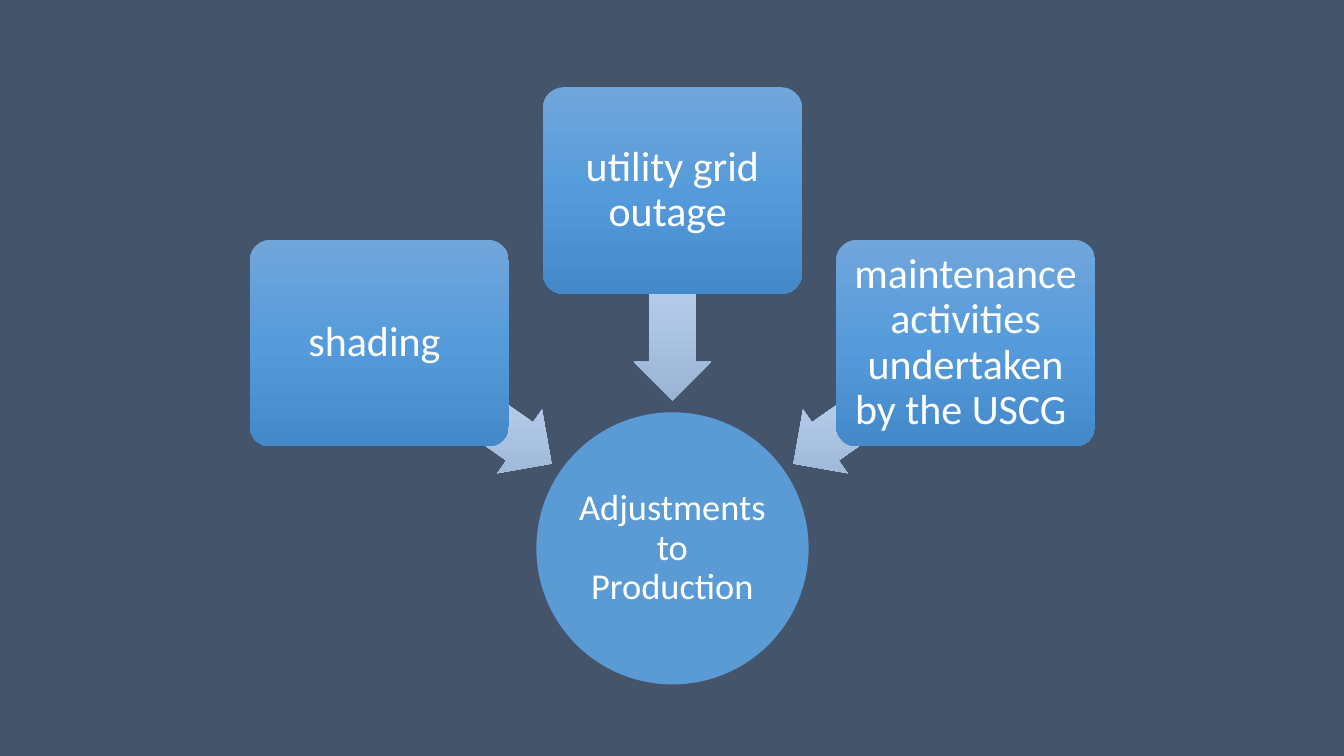
import copy
import math
from dataclasses import dataclass

from pptx import Presentation
from pptx import util as u
from pptx.dml.color import RGBColor
from pptx.enum import shapes, text


@dataclass(frozen=True)
class Theme:
    font: str = "Calibri"
    background: str = "44546A"
    ink: str = "FFFFFF"
    hub: str = "5B9BD5"
    cause: tuple = ("71A6DB", "559BDB", "448ACA")
    arrow: tuple = ("C0D2EB", "B3CBE9", "9BB4D3")
    hub_size: int = 26
    cause_size: int = 30


THEME = Theme()
CAUSES = ["shading ", "utility grid outage ",
          "maintenance activities undertaken by the USCG "]
ANGLE_STEP = 55  # degrees between neighbouring causes around the hub


def add_centred(slide, kind, centre, size):
    """Add a plain shape of the given (width, height) around a centre point."""
    (x, y), (width, height) = centre, size
    shape = slide.shapes.add_shape(
        kind, u.Inches(x - width / 2), u.Inches(y - height / 2),
        u.Inches(width), u.Inches(height))
    shape.shadow.inherit = False
    shape.line.fill.background()
    return shape


def fill_vertical(shape, colours):
    """Fill with evenly spaced colours from top to bottom, whatever the rotation."""
    shape.fill.gradient()
    shape.fill.gradient_angle = 270
    gradient = shape.element.spPr.find("{*}gradFill")
    gradient.set("rotWithShape", "0")
    stops = gradient.find("{*}gsLst")
    stops.append(copy.deepcopy(stops[-1]))
    for index, (stop, colour) in enumerate(zip(shape.fill.gradient_stops, colours)):
        stop.position = index / (len(colours) - 1)
        stop.color.rgb = RGBColor.from_string(colour)


def write_label(shape, label, size, inset):
    frame = shape.text_frame
    frame.text = label
    frame.word_wrap = True
    frame.vertical_anchor = text.MSO_ANCHOR.MIDDLE
    frame.margin_left = frame.margin_right = u.Inches(inset)
    frame.margin_top = frame.margin_bottom = u.Inches(inset)
    para = frame.paragraphs[0]
    para.alignment = text.PP_ALIGN.CENTER
    para.line_spacing = 0.9
    font = para.runs[0].font
    font.name = THEME.font
    font.size = u.Pt(size)
    font.color.rgb = RGBColor.from_string(THEME.ink)


def add_hub(slide, centre, diameter, label):
    hub = add_centred(slide, shapes.MSO_SHAPE.OVAL, centre, (diameter, diameter))
    hub.fill.solid()
    hub.fill.fore_color.rgb = RGBColor.from_string(THEME.hub)
    write_label(hub, label, THEME.hub_size, 0.02)


def add_arrow(slide, centre, rotation):
    arrow = add_centred(slide, shapes.MSO_SHAPE.LEFT_ARROW, centre, (2.07, 0.77))
    arrow.adjustments[0] = 0.6
    arrow.adjustments[1] = 0.5
    arrow.rotation = rotation
    fill_vertical(arrow, THEME.arrow)


def add_cause(slide, centre, label):
    cause = add_centred(slide, shapes.MSO_SHAPE.ROUNDED_RECTANGLE, centre, (2.57, 2.05))
    cause.adjustments[0] = 0.1
    fill_vertical(cause, THEME.cause)
    write_label(cause, label, THEME.cause_size, 0.06)


def add_converging_causes(slide, box, hub_label, causes):
    """Fan the causes over a hub at the foot of box, each with an arrow to the hub."""
    left, top, width, height = box
    diameter = 2.7
    hub = (left + width / 2, top + height - diameter / 2)

    def around_hub(radius, degrees):
        angle = math.radians(degrees)
        return hub[0] + radius * math.sin(angle), hub[1] - radius * math.cos(angle)

    add_hub(slide, hub, diameter, hub_label)
    for index, label in enumerate(causes):
        lean = (index - (len(causes) - 1) / 2) * ANGLE_STEP
        add_arrow(slide, around_hub(2.5, lean), 270 + lean)
        add_cause(slide, around_hub(3.55, lean), label)


def main():
    deck = Presentation()
    deck.slide_width, deck.slide_height = u.Inches(13.33), u.Inches(7.5)
    slide = deck.slides.add_slide(deck.slide_layouts[6])
    slide.background.fill.solid()
    slide.background.fill.fore_color.rgb = RGBColor.from_string(THEME.background)
    add_converging_causes(slide, (2.48, 0.87, 8.38, 5.92),
                          "Adjustments to Production", CAUSES)
    deck.save("out.pptx")


if __name__ == "__main__":
    main()
